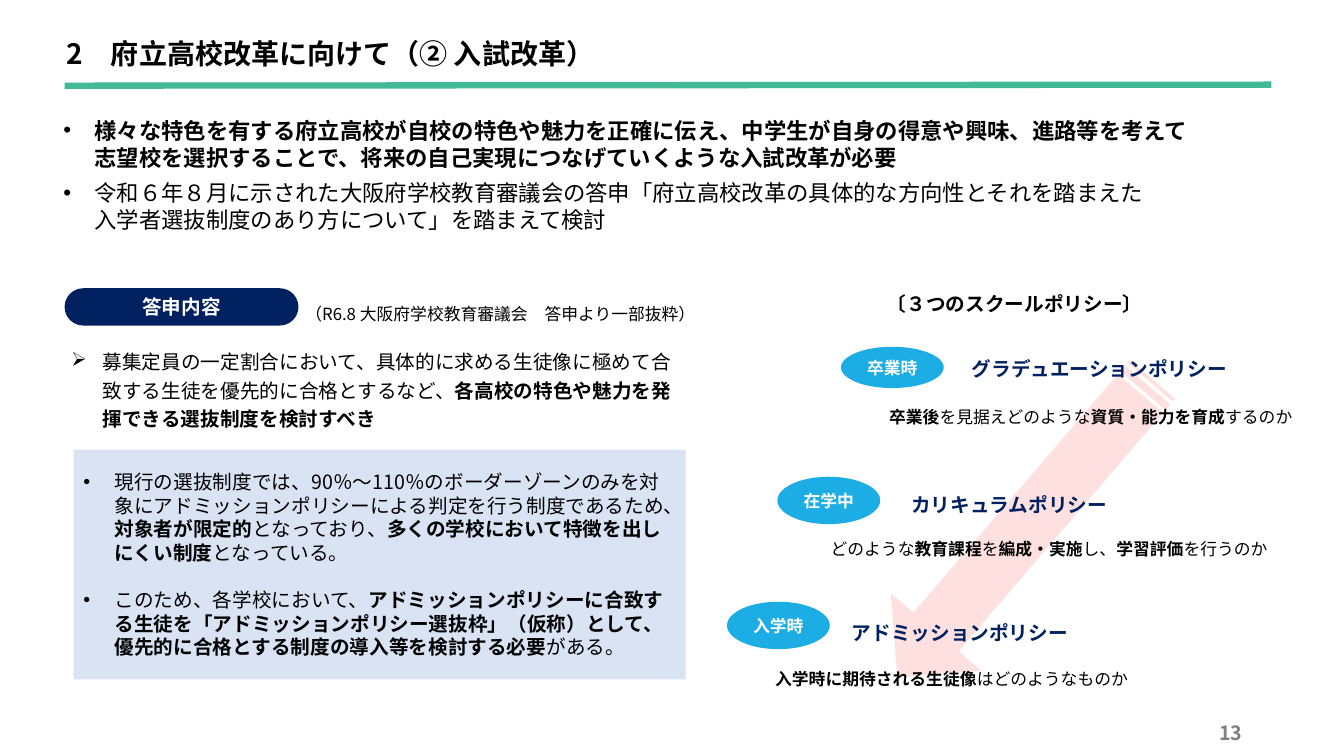
from lxml import etree
from pptx import Presentation
from pptx.dml.color import RGBColor
from pptx.enum import shapes, text
from pptx.oxml import ns
from pptx.util import Inches, Pt

FONT = "Noto Sans CJK JP"
COLORS = {"black": "000000", "white": "FFFFFF", "navy": "002060", "pale": "DAE3F3",
          "sky": "1CADE4", "pink": "FF9999", "green": "42BA97", "gray": "808080"}

TITLE = "**2　府立高校改革に向けて（② 入試改革）**"
INTRO = [
    "**様々な特色を有する府立高校が自校の特色や魅力を正確に伝え、中学生が自身の得意や興味、進路等を考えて\n"
    "志望校を選択することで、将来の自己実現につなげていくような入試改革が必要**",
    "令和６年８月に示された大阪府学校教育審議会の答申「府立高校改革の具体的な方向性とそれを踏まえた\n"
    "入学者選抜制度のあり方について」を踏まえて検討",
]
REPORT_LABEL = "**答申内容**"
REPORT_SOURCE = "（R6.8 大阪府学校教育審議会　答申より一部抜粋）"
PROPOSAL = ("募集定員の一定割合において、具体的に求める生徒像に極めて合致する生徒を優先的に合格とするなど、"
            "**各高校の特色や魅力を発揮できる選抜制度を検討すべき**")
REASONS = [
    "現行の選抜制度では、90％～110％のボーダーゾーンのみを対象にアドミッションポリシーによる判定を行う制度であるため、"
    "**対象者が限定的**となっており、**多くの学校において特徴を出しにくい制度**となっている。",
    "このため、各学校において、**アドミッションポリシーに合致する生徒を「アドミッションポリシー選抜枠」（仮称）として、"
    "優先的に合格とする制度の導入等を検討する必要**がある。",
]
POLICY_HEADING = "**〔３つのスクールポリシー〕**"
POLICIES = [
    {"stage": "**卒業時**", "stage_box": (8.34, 3.44, 1.02, 0.41),
     "name": "**グラデュエーションポリシー**", "name_box": (9.54, 3.49, 4, 0.34),
     "question": "**卒業後**を見据えどのような**資質・能力を育成**するのか",
     "question_box": (8.72, 3.99, 4.87, 0.28)},
    {"stage": "**在学中**", "stage_box": (7.71, 4.73, 1.02, 0.47),
     "name": "**カリキュラムポリシー**", "name_box": (8.94, 4.84, 3.81, 0.34),
     "question": "どのような**教育課程**を**編成・実施**し、**学習評価**を行うのか",
     "question_box": (8.14, 5.3, 4.97, 0.28)},
    {"stage": "**入学時**", "stage_box": (7.21, 5.97, 1.02, 0.47),
     "name": "**アドミッションポリシー**", "name_box": (8.35, 6.11, 4.29, 0.34),
     "question": "**入学時に期待される生徒像**はどのようなものか",
     "question_box": (7.59, 6.58, 4, 0.28)},
]
PAGE_NUMBER = "**13**"


def rgb(name):
    return RGBColor.from_string(COLORS[name])


def write(shape, paragraphs, size, color="black", align=text.PP_ALIGN.LEFT,
          anchor=text.MSO_ANCHOR.TOP, spacing=None, after=0, bullet=None, inset=None):
    frame = shape.text_frame
    frame.word_wrap = True
    frame.vertical_anchor = anchor
    if inset is not None:
        frame.margin_left = frame.margin_right = Inches(inset)
        frame.margin_top = frame.margin_bottom = Inches(inset)
    for index, content in enumerate(paragraphs):
        paragraph = frame.paragraphs[0] if index == 0 else frame.add_paragraph()
        paragraph.alignment = align
        paragraph.space_after = Pt(after if index < len(paragraphs) - 1 else 0)
        if spacing:
            paragraph.line_spacing = spacing
        if bullet:
            properties = paragraph._p.get_or_add_pPr()
            properties.set("marL", str(Inches(0.31)))
            properties.set("indent", str(-Inches(0.31)))
            typeface = "Arial" if bullet == "•" else "Wingdings"
            etree.SubElement(properties, ns.qn("a:buFont"), typeface=typeface)
            mark = "Ø" if typeface == "Wingdings" else bullet
            etree.SubElement(properties, ns.qn("a:buChar"), char=mark)
        for part, words in enumerate(content.split("**")):
            for line, piece in enumerate(words.split("\n")):
                if line:
                    paragraph.add_line_break()
                if piece:
                    run = paragraph.add_run()
                    run.text = piece
                    run.font.name = FONT
                    run.font.size = Pt(size)
                    run.font.bold = part % 2 == 1
                    run.font.color.rgb = rgb(color)
                    etree.SubElement(run.font._element, ns.qn("a:ea"), typeface=FONT)


def add_text(slide, box, paragraphs, size, **style):
    shape = slide.shapes.add_textbox(*map(Inches, box))
    write(shape, paragraphs, size, **style)


def add_block(slide, kind, box, fill):
    shape = slide.shapes.add_shape(kind, *map(Inches, box))
    shape.shadow.inherit = False
    shape.fill.solid()
    shape.fill.fore_color.rgb = rgb(fill)
    shape.line.fill.background()
    return shape


def add_header(slide):
    add_text(slide, (0.56, 0.26, 9.22, 0.47), [TITLE], 20, inset=0.1)
    rule = slide.shapes.add_connector(shapes.MSO_CONNECTOR.STRAIGHT,
                                      *map(Inches, (0.64, 0.85, 12.61, 0.84)))
    rule.line.color.rgb = rgb("green")
    rule.line.width = Pt(4.5)
    etree.SubElement(rule._element.spPr, ns.qn("a:effectLst"))
    add_text(slide, (0.53, 1.06, 12.08, 1.39), INTRO, 16, after=6, bullet="•", inset=0.1)


def add_report(slide):
    centred = {"align": text.PP_ALIGN.CENTER, "anchor": text.MSO_ANCHOR.MIDDLE}
    label = add_block(slide, shapes.MSO_SHAPE.ROUNDED_RECTANGLE, (0.64, 2.86, 2.32, 0.37), "navy")
    label.adjustments[0] = 0.5
    write(label, [REPORT_LABEL], 14, color="white", **centred)
    add_text(slide, (2.93, 2.92, 4.42, 0.33), [REPORT_SOURCE], 12, spacing=1.2)
    add_text(slide, (0.61, 3.38, 6.19, 0.94), [PROPOSAL], 14, spacing=1.2, bullet="➢")
    panel = add_block(slide, shapes.MSO_SHAPE.RECTANGLE, (0.73, 4.46, 6.07, 2.28), "pale")
    write(panel, REASONS, 14, anchor=text.MSO_ANCHOR.MIDDLE, after=17, bullet="•")


def add_policies(slide):
    add_text(slide, (8.11, 2.8, 3.91, 0.37), [POLICY_HEADING], 14,
             align=text.PP_ALIGN.CENTER, spacing=1.2)
    arrow = add_block(slide, shapes.MSO_SHAPE.STRIPED_RIGHT_ARROW, (8.22, 4.65, 3.89, 1.18), "pink")
    arrow.rotation = 130.6
    color = arrow._element.spPr.find(ns.qn("a:solidFill")).find(ns.qn("a:srgbClr"))
    etree.SubElement(color, ns.qn("a:alpha"), val="30000")
    for policy in POLICIES:
        stage = add_block(slide, shapes.MSO_SHAPE.OVAL, policy["stage_box"], "sky")
        write(stage, [policy["stage"]], 12, color="white", align=text.PP_ALIGN.CENTER,
              anchor=text.MSO_ANCHOR.MIDDLE)
        add_text(slide, policy["name_box"], [policy["name"]], 14, color="navy")
        add_text(slide, policy["question_box"], [policy["question"]], 12)


def main():
    presentation = Presentation()
    presentation.slide_width = Inches(13.33)
    presentation.slide_height = Inches(7.5)
    slide = presentation.slides.add_slide(presentation.slide_layouts[6])
    add_header(slide)
    add_report(slide)
    add_policies(slide)
    add_text(slide, (9.42, 7.1, 3, 0.4), [PAGE_NUMBER], 14, color="gray",
             align=text.PP_ALIGN.RIGHT)
    presentation.save("out.pptx")


if __name__ == "__main__":
    main()
